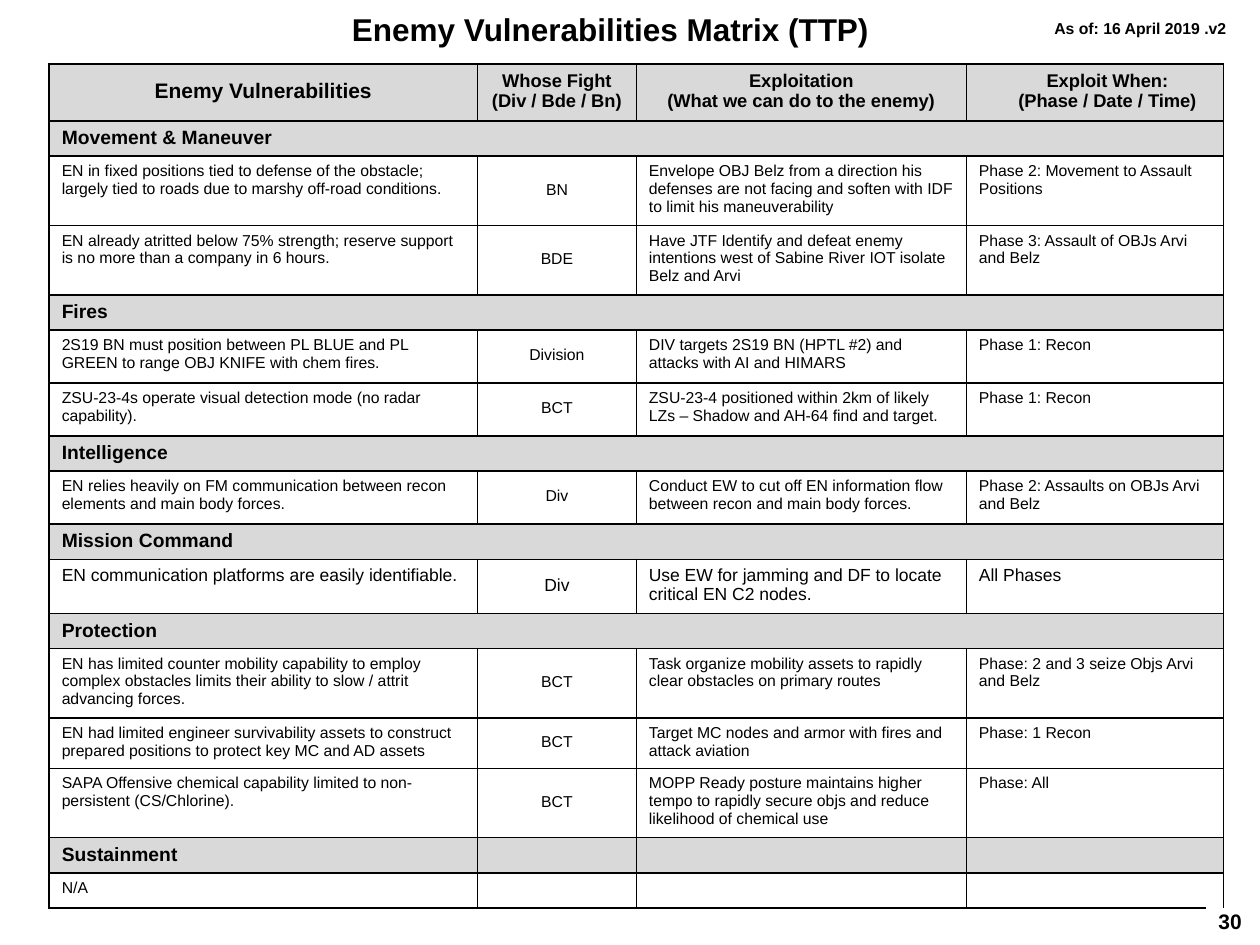
from pptx import Presentation
from pptx.dml.color import RGBColor
from pptx.enum.text import MSO_ANCHOR as Anchor, PP_ALIGN as Align
from pptx.oxml import parse_xml
from pptx.oxml.ns import nsdecls
from pptx.util import Inches, Pt

BLACK, GREY = "000000", "D9D9D9"
COLUMNS = [3.4, 1.26, 2.62, 1.9, 0.14]
SECTION_HEIGHT = 0.28
HEADER = ["Enemy Vulnerabilities", "Whose Fight\v(Div / Bde / Bn)",
          "Exploitation\v(What we can do to the enemy)",
          "Exploit When:\v(Phase / Date / Time)"]
SECTIONS = {
    "Movement & Maneuver": [
        (0.55, 9, "EN in fixed positions tied to defense of the obstacle;\vlargely tied to roads due to marshy off-road conditions.",
         "BN", "Envelope OBJ Belz from a direction his\vdefenses are not facing and soften with IDF\vto limit his maneuverability",
         "Phase 2: Movement to Assault\vPositions"),
        (0.55, 9, "EN already atritted below 75% strength; reserve support\vis no more than a company in 6 hours.",
         "BDE", "Have JTF Identify and defeat enemy\vintentions west of Sabine River IOT isolate\vBelz and Arvi",
         "Phase 3: Assault of OBJs Arvi\vand Belz")],
    "Fires": [
        (0.42, 9, "2S19 BN must position between PL BLUE and PL\vGREEN to range OBJ KNIFE with chem fires.",
         "Division", "DIV targets 2S19 BN (HPTL #2) and\vattacks with AI and HIMARS", "Phase 1: Recon"),
        (0.42, 9, "ZSU-23-4s operate visual detection mode (no radar\vcapability).",
         "BCT", "ZSU-23-4 positioned within 2km of likely\vLZs – Shadow and AH-64 find and target.",
         "Phase 1: Recon")],
    "Intelligence": [
        (0.42, 9, "EN relies heavily on FM communication between recon\velements and main body forces.",
         "Div", "Conduct EW to cut off EN information flow\vbetween recon and main body forces.",
         "Phase 2: Assaults on OBJs Arvi\vand Belz")],
    "Mission Command": [
        (0.43, 10, "EN communication platforms are easily identifiable.",
         "Div", "Use EW for jamming and DF to locate\vcritical EN C2 nodes.", "All Phases")],
    "Protection": [
        (0.55, 9, "EN has limited counter mobility capability to employ\vcomplex obstacles limits their ability to slow / attrit\vadvancing forces.",
         "BCT", "Task organize mobility assets to rapidly\vclear obstacles on primary routes",
         "Phase: 2 and 3 seize Objs Arvi\vand Belz"),
        (0.4, 9, "EN had limited engineer survivability assets to construct\vprepared positions to protect key MC and AD assets",
         "BCT", "Target MC nodes and armor with fires and\vattack aviation", "Phase: 1 Recon"),
        (0.55, 9, "SAPA Offensive chemical capability limited to non-\vpersistent (CS/Chlorine).",
         "BCT", "MOPP Ready posture maintains higher\vtempo to rapidly secure objs and reduce\vlikelihood of chemical use",
         "Phase: All")],
    "Sustainment": [(0.28, 9, "N/A", "", "", "")],
}


def color(code):
    """Turn a hex string into a colour."""
    return RGBColor.from_string(code)


def write(frame, text, size, bold=False, align=Align.LEFT):
    """Put one styled paragraph into a text frame."""
    para = frame.paragraphs[0]
    para.text, para.alignment = text, align
    for span in para.runs:
        for name, value in {"name": "Arial", "size": Pt(size), "bold": bold}.items():
            setattr(span.font, name, value)
        span.font.color.rgb = color(BLACK)
    para._p.get_or_add_endParaRPr().set("sz", str(int(size * 100)))


def add_label(page, left, top, width, height, text, size, align=Align.LEFT):
    """Add a bold one-line text box without insets."""
    box = page.shapes.add_textbox(*map(Inches, (left, top, width, height)))
    for side in ("left", "top", "right", "bottom"):
        setattr(box.text_frame, f"margin_{side}", 0)
    box.text_frame.word_wrap = False
    write(box.text_frame, text, size, True, align)


def set_borders(cell, sides="LRTB"):
    """Draw thin black lines on the named sides and none on the others."""
    props = cell._tc.get_or_add_tcPr()
    for side in "LRTB":
        paint = f'<a:solidFill><a:srgbClr val="{BLACK}"/></a:solidFill>' if side in sides else "<a:noFill/>"
        props.append(parse_xml(f'<a:ln{side} {nsdecls("a")} w="{Pt(1)}">{paint}</a:ln{side}>'))


def fill_cell(cell, text, size, bold=False, centred=False, shade=None, sides="LRTB", left=0.1):
    """Give a cell its text, insets, borders and fill."""
    formats = {"margin_left": 0 if centred and left == 0.1 else Inches(left),
               "margin_right": 0, "margin_top": 0 if centred else Inches(0.05),
               "margin_bottom": Inches(0.02) if centred else 0,
               "vertical_anchor": Anchor.MIDDLE if centred else Anchor.TOP}
    for name, value in formats.items():
        setattr(cell, name, value)
    write(cell.text_frame, text, size, bold, Align.CENTER if centred else Align.LEFT)
    set_borders(cell, sides)
    if shade:
        cell.fill.solid()
        cell.fill.fore_color.rgb = color(shade)
    else:
        cell.fill.background()


def add_header(table):
    """Fill the shaded heading row."""
    for column, text in enumerate([*HEADER, ""]):
        fill_cell(table.cell(0, column), text, 10.5 if column else 12, True, True, GREY,
                  left=0.2 if column == 3 else 0.1)
    table.cell(0, 3).merge(table.cell(0, 4))


def add_section(table, row, title):
    """Fill a shaded section row, joined across unless it is the last one."""
    for column in range(len(COLUMNS)):
        fill_cell(table.cell(row, column), "" if column else title, 11, True, shade=GREY)
    first = 3 if title == "Sustainment" else 0
    table.cell(row, first).merge(table.cell(row, 4))


def add_entry(table, row, size, texts, last):
    """Fill a row with one vulnerability."""
    for column, text in enumerate([*texts, ""]):
        sides = "TR" if last and column == 4 else "LRTB"
        fill_cell(table.cell(row, column), text, size, centred=column == 1, sides=sides)
    if not last:
        table.cell(row, 3).merge(table.cell(row, 4))


def add_matrix(page):
    """Add the table with its header, sections and entries."""
    heights = [0.45]
    for entries in SECTIONS.values():
        heights += [SECTION_HEIGHT, *(entry[0] for entry in entries)]
    frame = page.shapes.add_table(len(heights), len(COLUMNS), Inches(0.39), Inches(0.51),
                                  Inches(sum(COLUMNS)), Inches(sum(heights)))
    table = frame.table
    table.first_row = table.horz_banding = False
    for column, width in zip(table.columns, COLUMNS):
        column.width = Inches(width)
    for line, height in zip(table.rows, heights):
        line.height = Inches(height)
    add_header(table)
    row = 1
    for title, entries in SECTIONS.items():
        add_section(table, row, title)
        for row, (_, size, *texts) in enumerate(entries, row + 1):
            add_entry(table, row, size, texts, row == len(heights) - 1)
        row += 1


def main():
    """Build and save the slide."""
    deck = Presentation()
    deck.slide_width, deck.slide_height = Inches(10), Inches(7.5)
    page = deck.slides.add_slide(deck.slide_layouts[6])
    add_label(page, 2.78, 0.08, 4.13, 0.31, "Enemy Vulnerabilities Matrix (TTP)", 18, Align.CENTER)
    add_label(page, 9.67, 7.21, 0.27, 0.22, "30", 12)
    add_matrix(page)
    add_label(page, 8.35, 0.15, 1.4, 0.16, "As of: 16 April 2019 .v2", 9, Align.CENTER)
    deck.save("out.pptx")


if __name__ == "__main__":
    main()
